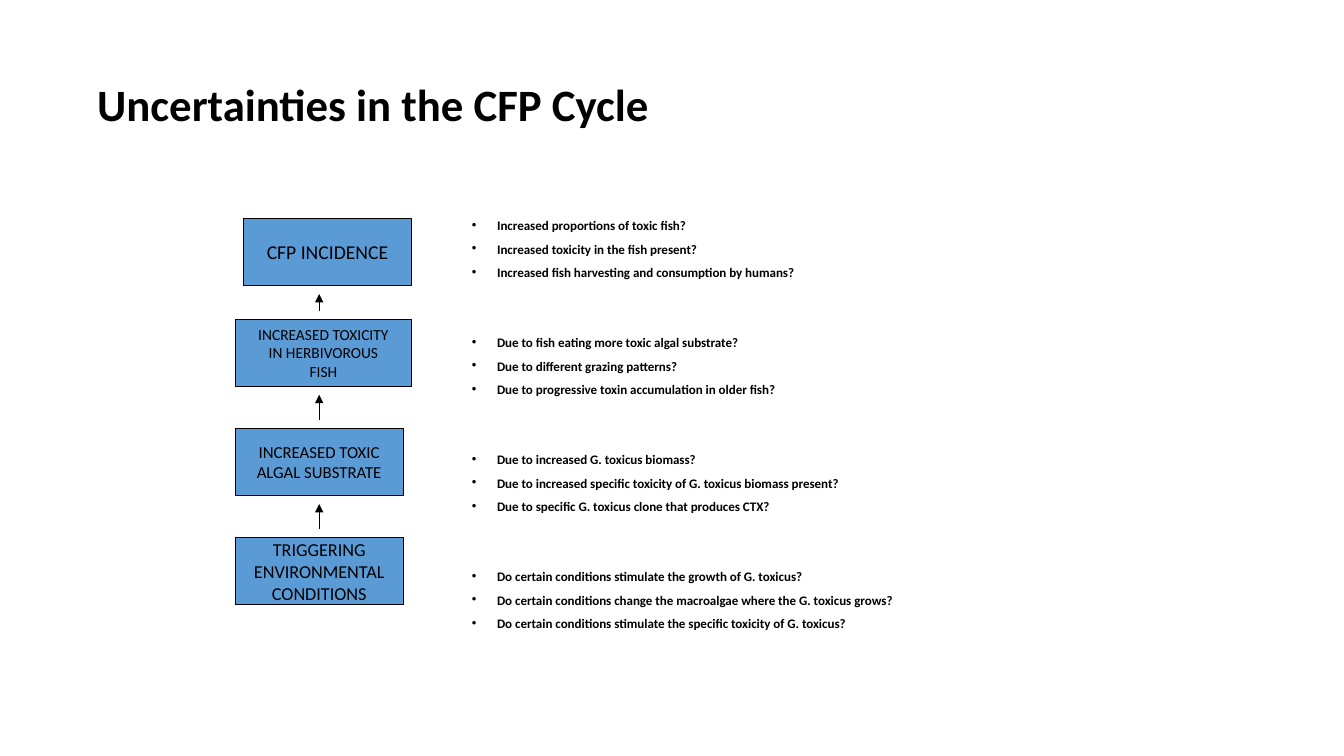
from dataclasses import dataclass
from itertools import pairwise

from lxml import etree
from pptx import Presentation
from pptx.dml.color import RGBColor
from pptx.enum.shapes import MSO_CONNECTOR, MSO_SHAPE
from pptx.enum.text import MSO_ANCHOR, PP_ALIGN
from pptx.oxml.ns import qn
from pptx.slide import Slide
from pptx.text.text import TextFrame
from pptx.util import Emu, Pt

PX = 9525
BLACK = RGBColor(0x00, 0x00, 0x00)
BLUE = RGBColor(0x5B, 0x9B, 0xD5)
FONT = "Calibri"
LEFT, CENTER = PP_ALIGN.LEFT, PP_ALIGN.CENTER
TOP, MIDDLE = MSO_ANCHOR.TOP, MSO_ANCHOR.MIDDLE
RECT = MSO_SHAPE.RECTANGLE
STRAIGHT = MSO_CONNECTOR.STRAIGHT

BOX_H = 64
GAP = 8
ARROW_X = 304
INDENT = 24


@dataclass(frozen=True)
class Stage:
    left: int
    top: int
    width: int
    size: int
    label: list[str]
    doubts: list[str]


STAGES = [
    Stage(232, 208, 160, 14, ["CFP INCIDENCE"], [
        "Increased proportions of toxic fish?",
        "Increased toxicity in the fish present?",
        "Increased fish harvesting and consumption by humans?",
    ]),
    Stage(224, 304, 168, 11, ["INCREASED TOXICITY", "IN HERBIVOROUS", "FISH"], [
        "Due to fish eating more toxic algal substrate?",
        "Due to different grazing patterns?",
        "Due to progressive toxin accumulation in older fish?",
    ]),
    Stage(224, 408, 160, 12, ["INCREASED TOXIC", "ALGAL SUBSTRATE"], [
        "Due to increased G. toxicus biomass?",
        "Due to increased specific toxicity of G. toxicus biomass present?",
        "Due to specific G. toxicus clone that produces CTX?",
    ]),
    Stage(224, 512, 160, 13, ["TRIGGERING", "ENVIRONMENTAL", "CONDITIONS"], [
        "Do certain conditions stimulate the growth of G. toxicus?",
        "Do certain conditions change the macroalgae where the G. toxicus grows?",
        "Do certain conditions stimulate the specific toxicity of G. toxicus?",
    ]),
]


def px(count: int) -> Emu:
    return Emu(count * PX)


def write(frame: TextFrame, lines: list[str], *, size: float, bold: bool = False,
          align: PP_ALIGN = LEFT, anchor: MSO_ANCHOR = MIDDLE,
          wrap: bool = True, spacing: float = 1.0) -> None:
    frame.word_wrap = wrap
    frame.vertical_anchor = anchor
    for index, line in enumerate(lines):
        para = frame.paragraphs[0] if index == 0 else frame.add_paragraph()
        para.alignment = align
        para.line_spacing = spacing
        run = para.add_run()
        run.text = line
        run.font.name = FONT
        run.font.size = Pt(size)
        run.font.bold = bold
        run.font.color.rgb = BLACK


def add_title(slide: Slide) -> None:
    title = slide.shapes.title
    title.left, title.top = px(83), px(32)
    title.width, title.height = px(1104), px(139)
    write(title.text_frame, ["Uncertainties in the CFP Cycle"],
          size=32, bold=True, spacing=0.9)


def add_box(slide: Slide, stage: Stage) -> None:
    box = slide.shapes.add_shape(
        RECT, px(stage.left), px(stage.top), px(stage.width), px(BOX_H))
    box.shadow.inherit = False
    box.fill.solid()
    box.fill.fore_color.rgb = BLUE
    box.line.color.rgb = BLACK
    box.line.width = Pt(0.75)
    write(box.text_frame, stage.label, size=stage.size, align=CENTER, wrap=False)


def add_arrow(slide: Slide, upper: Stage, lower: Stage) -> None:
    arrow = slide.shapes.add_connector(
        STRAIGHT, px(ARROW_X), px(lower.top - GAP),
        px(ARROW_X), px(upper.top + BOX_H + GAP))
    arrow.line.color.rgb = BLACK
    arrow.line.width = Pt(0.75)
    etree.SubElement(arrow.line._get_or_add_ln(), qn("a:tailEnd"), type="triangle")
    etree.SubElement(arrow._element.spPr, qn("a:effectLst"))


def add_doubts(slide: Slide) -> None:
    frame = slide.shapes.add_textbox(px(440), px(208), px(680), px(432)).text_frame
    lines = [doubt for stage in STAGES for doubt in stage.doubts]
    heads = {stage.doubts[0] for stage in STAGES[1:]}
    write(frame, lines, size=9.3, bold=True, anchor=TOP, spacing=0.6)
    for index, para in enumerate(frame.paragraphs):
        if index:
            para.space_before = Pt(43.5 if para.text in heads else 10)
        props = para._p.get_or_add_pPr()
        props.set("marL", str(px(INDENT)))
        props.set("indent", str(px(-INDENT)))
        etree.SubElement(props, qn("a:buFont"), typeface="Arial")
        etree.SubElement(props, qn("a:buChar"), char="•")


def main() -> None:
    deck = Presentation()
    deck.slide_width, deck.slide_height = px(1280), px(720)
    slide = deck.slides.add_slide(deck.slide_layouts.get_by_name("Title Only"))
    add_title(slide)
    add_doubts(slide)
    for stage in STAGES:
        add_box(slide, stage)
    for upper, lower in pairwise(STAGES):
        add_arrow(slide, upper, lower)
    deck.save("out.pptx")


if __name__ == "__main__":
    main()
